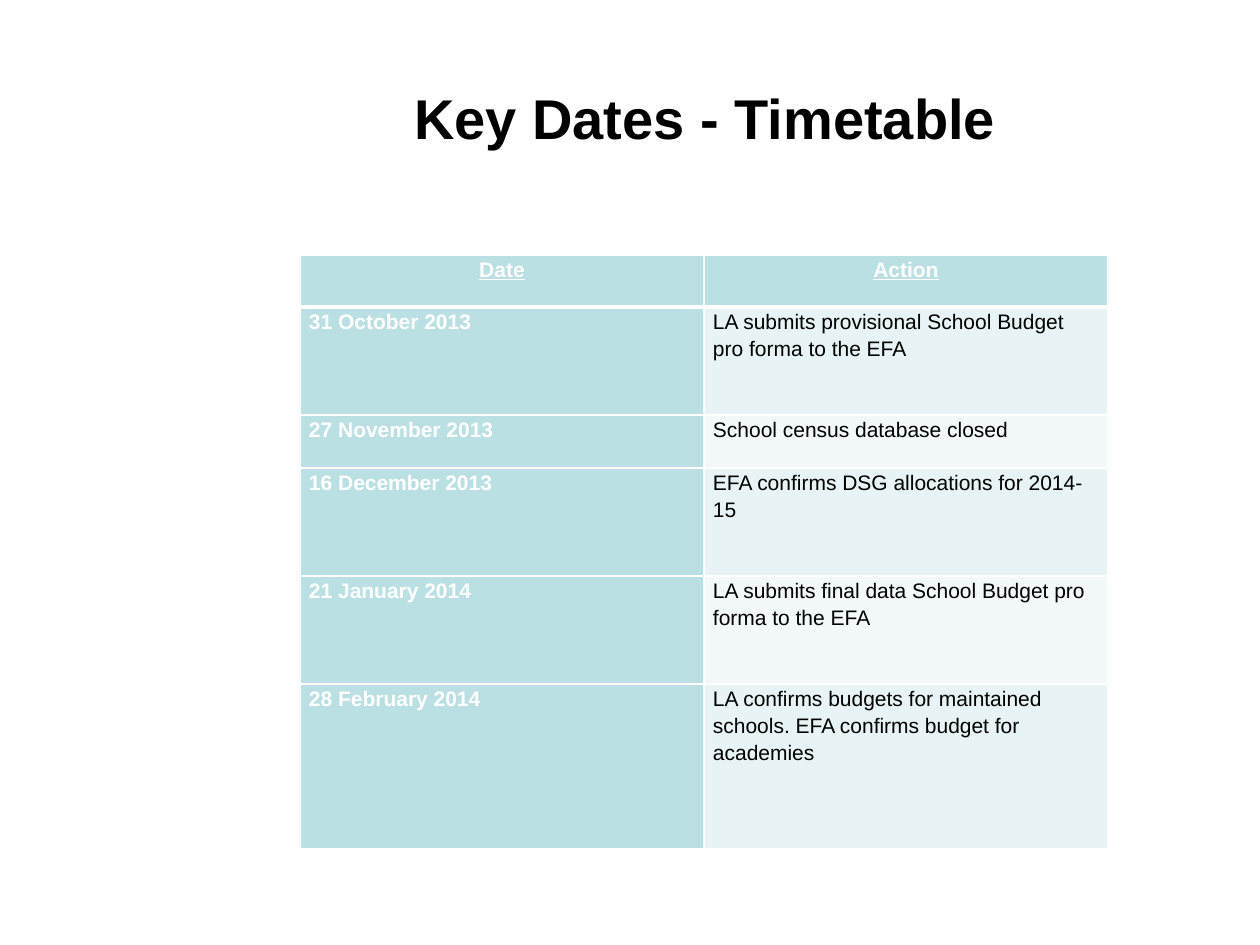
import pptx
import pptx.dml.color
import pptx.enum.text
import pptx.oxml
import pptx.oxml.ns
import pptx.util
from dataclasses import dataclass

SCALE = 914400 / 126  # EMU in one px
FONT = "Arial"
WHITE, BLACK, TEAL = "FFFFFF", "000000", "BBE0E3"
BANDS = ("E7F3F4", "F3F9FA")
ALIGN = pptx.enum.text.PP_ALIGN


@dataclass
class Row:
    date: str
    action: str
    height: int


@dataclass
class Style:
    size: int
    color: str
    bold: bool = False
    line: bool = False
    align: ALIGN = ALIGN.LEFT


HEAD = Style(12, WHITE, True, True, ALIGN.CENTER)
DATE = Style(12, WHITE, True)
ACTION = Style(12, BLACK)
TITLE = Style(32, BLACK, True, align=ALIGN.CENTER)

ROWS = [
    Row("Date", "Action", 52),
    Row("31 October 2013", "LA submits provisional School Budget pro forma to the EFA", 108),
    Row("27 November 2013", "School census database closed", 53),
    Row("16 December 2013", "EFA confirms DSG allocations for 2014-15", 108),
    Row("21 January 2014", "LA submits final data School Budget pro forma to the EFA", 108),
    Row("28 February 2014", "LA confirms budgets for maintained schools. "
        "EFA confirms budget for academies", 165),
]


def px(n: int) -> int:
    return round(n * SCALE)


def rgb(code: str) -> pptx.dml.color.RGBColor:
    return pptx.dml.color.RGBColor.from_string(code)


def write(frame, text: str, style: Style) -> None:
    frame.text = text
    para = frame.paragraphs[0]
    para.alignment = style.align
    font = para.font
    font.name, font.size = FONT, pptx.util.Pt(style.size)
    font.bold, font.underline = style.bold, style.line
    font.color.rgb = rgb(style.color)


def edge(cell, side: str, width: int) -> None:
    cell._tc.get_or_add_tcPr().append(pptx.oxml.parse_xml(
        f'<a:ln{side} {pptx.oxml.ns.nsdecls("a")} w="{pptx.util.Pt(width)}">'
        f'<a:solidFill><a:srgbClr val="{WHITE}"/></a:solidFill></a:ln{side}>'))


def draw_cell(cell, text: str, style: Style, fill: str, top: int, base: int) -> None:
    for side, width in (("L", 1), ("R", 1), ("T", top), ("B", base)):
        edge(cell, side, width)
    cell.fill.solid()
    cell.fill.fore_color.rgb = rgb(fill)
    cell.margin_left = cell.margin_right = px(9)
    cell.margin_top = cell.margin_bottom = 0
    write(cell.text_frame, text, style)
    cell.text_frame.paragraphs[0].line_spacing = 1.15


def draw_table(slide, rows: list[Row]) -> None:
    high = sum(row.height for row in rows)
    table = slide.shapes.add_table(
        len(rows), 2, px(300), px(255), px(808), px(high)).table
    for i, row in enumerate(rows):
        table.rows[i].height = px(row.height)
        # A thick rule parts the header from the dates
        top, base = (3 if i == 1 else 1), (3 if i == 0 else 1)
        left, right = (DATE, ACTION) if i else (HEAD, HEAD)
        band = BANDS[(i - 1) % 2] if i else TEAL
        draw_cell(table.cell(i, 0), row.date, left, TEAL, top, base)
        draw_cell(table.cell(i, 1), row.action, right, band, top, base)


def main() -> None:
    deck = pptx.Presentation()
    deck.slide_width, deck.slide_height = px(1260), px(945)
    slide = deck.slides.add_slide(deck.slide_layouts[5])

    # Title
    title = slide.shapes.title
    title.left, title.top = px(174), px(38)
    title.width, title.height = px(1062), px(158)
    title.text_frame.vertical_anchor = pptx.enum.text.MSO_ANCHOR.MIDDLE
    write(title.text_frame, "Key Dates - Timetable", TITLE)

    # Timetable
    draw_table(slide, ROWS)
    deck.save("out.pptx")


if __name__ == "__main__":
    main()
